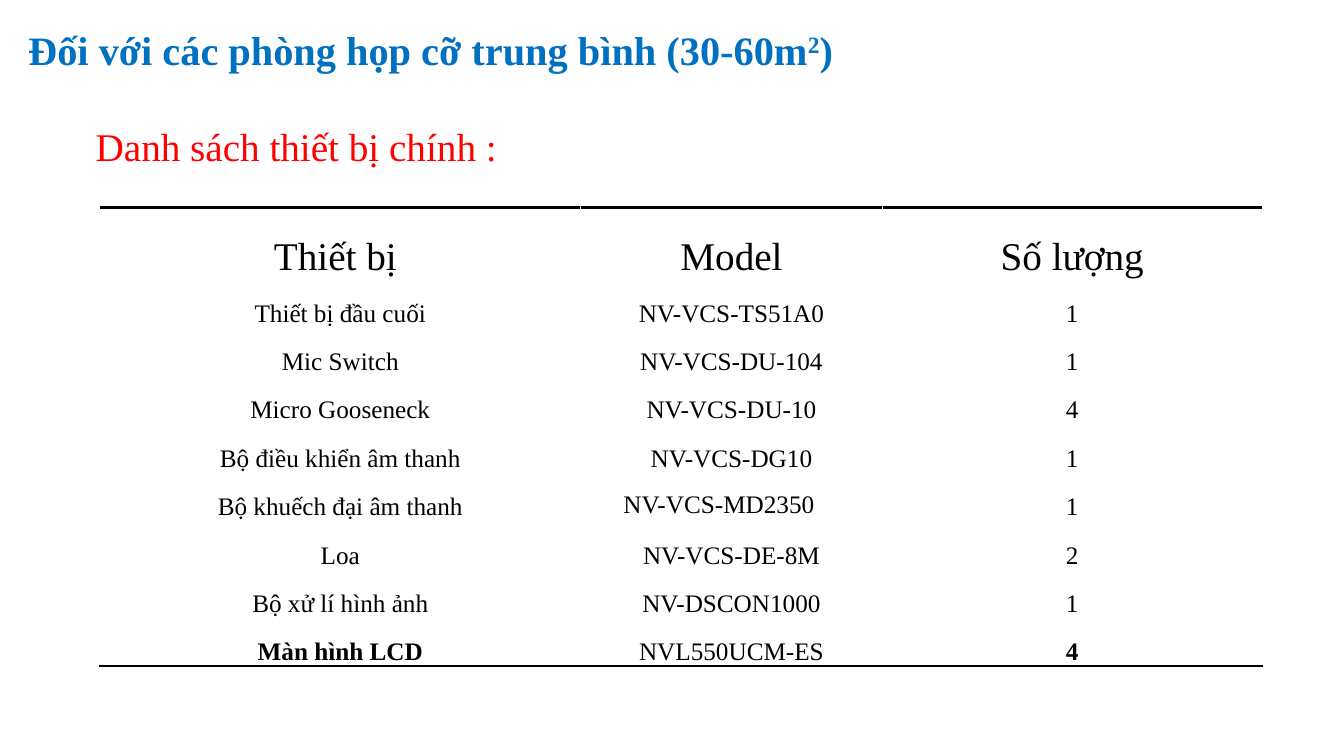
import pptx
import pptx.util
import pptx.dml.color
import pptx.enum.text
import pptx.oxml
import pptx.oxml.ns

# Content
TITLE = [("Đối với các phòng họp cỡ trung bình (30-60m", 0), ("2", 30000), (")", 0)]
LEAD = "Danh sách thiết bị chính :"
ROWS = [
    ("Thiết bị ", "Model", "Số lượng"),
    ("Thiết bị đầu cuối", "NV-VCS-TS51A0", "1"),
    ("Mic Switch", "NV-VCS-DU-104", "1"),
    ("Micro Gooseneck", "NV-VCS-DU-10", "4"),
    ("Bộ điều khiển âm thanh", "NV-VCS-DG10", "1"),
    ("Bộ khuếch đại âm thanh", "NV-VCS-MD2350　", "1"),
    ("Loa", "NV-VCS-DE-8M", "2"),
    ("Bộ xử lí hình ảnh", "NV-DSCON1000", "1"),
    ("Màn hình LCD", "NVL550UCM-ES", "4"),
]
LAST = len(ROWS) - 1
BOLD = {(LAST, 0), (LAST, 2)}

# Layout in inches
WIDE, HIGH = 13.33, 7.5
COLS = [4.77, 2.99, 3.77]
HEAD, STEP = 0.71, 0.48

inch = pptx.util.Inches
Mid = pptx.enum.text.MSO_ANCHOR
Side = pptx.enum.text.PP_ALIGN


def paint(code):
    return pptx.dml.color.RGBColor.from_string(code)


def style(para, size, code, bold=False, align=Side.LEFT):
    para.alignment = align
    font = para.font
    font.name, font.size, font.bold = "Times New Roman", pptx.util.Pt(size), bold
    font.color.rgb = paint(code)


def rule(cell, edge):
    line = pptx.oxml.parse_xml(
        f'<a:{edge} {pptx.oxml.ns.nsdecls("a")} w="25400"><a:solidFill>'
        f'<a:srgbClr val="000000"/></a:solidFill></a:{edge}>')
    cell._tc.get_or_add_tcPr().insert(0, line)


deck = pptx.Presentation()
deck.slide_width, deck.slide_height = inch(WIDE), inch(HIGH)
slide = deck.slides.add_slide(deck.slide_layouts[5])

# Title with raised exponent
title = slide.shapes.title
title.left, title.top, title.width, title.height = map(inch, (0.18, 0, 8.23, 1.04))
frame = title.text_frame
frame.auto_size = pptx.enum.text.MSO_AUTO_SIZE.NONE
frame.vertical_anchor = Mid.MIDDLE
para = frame.paragraphs[0]
para.line_spacing = 0.9
style(para, 28.8, "0070C0", True)
for text, lift in TITLE:
    run = para.add_run()
    run.text = text
    if lift:
        run.font._element.set("baseline", str(lift))

# Equipment table
grid = slide.shapes.add_table(
    len(ROWS), len(COLS), inch(0.99), inch(2.06),
    inch(sum(COLS)), inch(HEAD + LAST * STEP)).table
grid.first_row = grid.horz_banding = False
for col, width in zip(grid.columns, COLS):
    col.width = inch(width)
for i, texts in enumerate(ROWS):
    grid.rows[i].height = inch(STEP if i else HEAD)
    for j, text in enumerate(texts):
        cell = grid.cell(i, j)
        cell.text = text
        cell.vertical_anchor = Mid.BOTTOM
        cell.margin_left = cell.margin_right = cell.margin_top = inch(0.01)
        cell.margin_bottom = 0
        cell.fill.solid()
        cell.fill.fore_color.rgb = paint("FFFFFF")
        style(cell.text_frame.paragraphs[0], 18 if i else 28, "000000",
              (i, j) in BOLD, Side.CENTER)
        if i == 0:
            rule(cell, "lnT")
        elif i == LAST:
            rule(cell, "lnB")

# Lead line above the table
lead = slide.shapes.add_textbox(*map(inch, (0.85, 1.16, 5.35, 0.57))).text_frame
lead.word_wrap = True
lead.text = LEAD
style(lead.paragraphs[0], 28, "FF0000")

deck.save("out.pptx")
